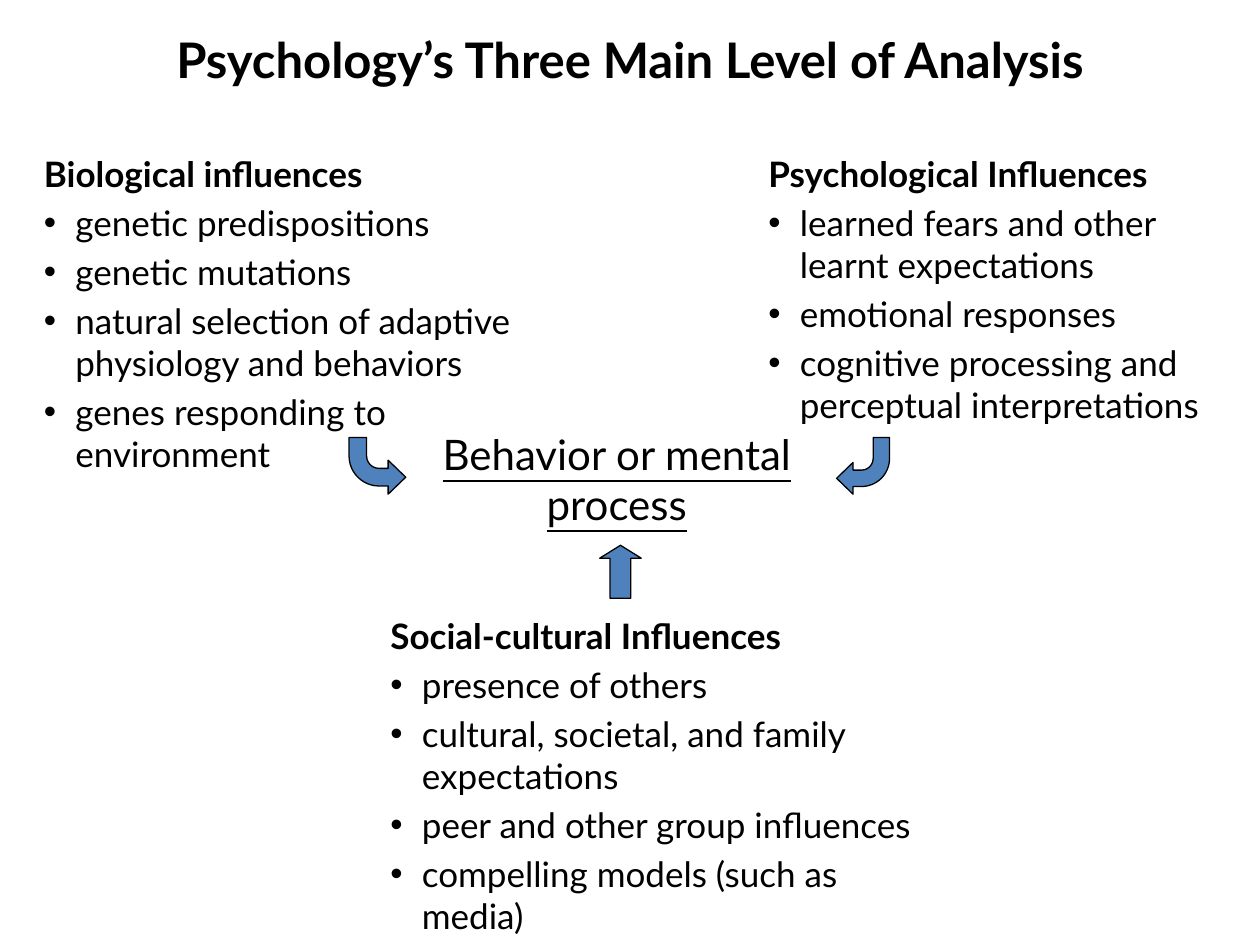
"""Build a slide on psychology's three main levels of analysis."""
from lxml import etree
from pptx import Presentation, util as u
from pptx.dml.color import RGBColor
from pptx.enum import shapes, text
from pptx.oxml import ns

THEME = {
    "font": "Lato", "ink": RGBColor.from_string("000000"),
    "arrow": RGBColor.from_string("4F81BD"), "outline": 0.75,
    "title": 28, "center": 24, "body": 20, "gap": 0.2, "indent": 0.25,
}
WIDTH, HEIGHT = 10, 7.5
TITLE = ("Psychology’s Three Main Level of Analysis", (0.05, 0.025, 0.9, 0.09))
CENTER = ("Behavior or mental process", (0.338, 0.473, 0.303, 0.067))
INFLUENCES = [
    ("Social-cultural Influences", (0.3, 0.644, 0.462, 0.336), [
        "presence of others",
        "cultural, societal, and family expectations",
        "peer and other group influences",
        "compelling models (such as media)",
    ]),
    ("Psychological Influences", (0.6, 0.155, 0.4, 0.227), [
        "learned fears and other learnt expectations",
        "emotional responses",
        "cognitive processing and perceptual interpretations",
    ]),
    ("Biological influences", (0.025, 0.155, 0.4, 0.227), [
        "genetic predispositions",
        "genetic mutations",
        "natural selection of adaptive physiology and behaviors",
        "genes responding to environment",
    ]),
]
BENT = ("BENT_ARROW", (0.31, 0.3, 0.31, 0.53))
ARROWS = [
    (*BENT, (0.664, 0.463, 0.042, 0.06), ("flipH", "flipV")),
    (*BENT, (0.277, 0.463, 0.045, 0.06), ("flipV",)),
    ("UP_ARROW", (0.5, 0.312), (0.476, 0.577, 0.033, 0.056), ()),
]


def place(shares):
    """Turn shares of the slide into lengths."""
    return [u.Inches(share * side) for share, side in zip(shares, (WIDTH, HEIGHT) * 2)]


def add_box(page, shares, anchor=text.MSO_ANCHOR.TOP):
    """Add a wrapping text box and return its frame."""
    frame = page.shapes.add_textbox(*place(shares)).text_frame
    frame.word_wrap = True
    frame.vertical_anchor = anchor
    return frame


def write(para, words, size, align=text.PP_ALIGN.LEFT, **formats):
    """Write one formatted span into a paragraph."""
    para.alignment = align
    para.space_before = u.Pt(size * THEME["gap"])
    span = para.add_run()
    span.text = words
    span.font.color.rgb = THEME["ink"]
    formats = {"name": THEME["font"], "size": u.Pt(size), **formats}
    for name, value in formats.items():
        setattr(span.font, name, value)


def add_bullet(para):
    """Give a paragraph a hanging bullet."""
    indent = u.Inches(THEME["indent"])
    properties = para._p.get_or_add_pPr()
    properties.set("marL", str(indent))
    properties.set("indent", str(-indent))
    etree.SubElement(properties, ns.qn("a:buFont")).set("typeface", "Arial")
    etree.SubElement(properties, ns.qn("a:buChar")).set("char", "•")


def add_influence(page, heading, shares, items):
    """Add a heading with its bulleted list."""
    frame = add_box(page, shares)
    write(frame.paragraphs[0], heading, THEME["body"], bold=True)
    for item in items:
        para = frame.add_paragraph()
        write(para, item, THEME["body"])
        add_bullet(para)


def add_arrow(page, kind, adjustments, shares, flips):
    """Add a block arrow, mirrored as asked."""
    arrow = page.shapes.add_shape(getattr(shapes.MSO_SHAPE, kind), *place(shares))
    for index, value in enumerate(adjustments):
        arrow.adjustments[index] = value
    for flip in flips:
        arrow._element.spPr.find(ns.qn("a:xfrm")).set(flip, "1")
    arrow.shadow.inherit = False
    arrow.fill.solid()
    arrow.fill.fore_color.rgb = THEME["arrow"]
    arrow.line.color.rgb = THEME["ink"]
    arrow.line.width = u.Pt(THEME["outline"])


def main():
    """Build and save the deck."""
    deck = Presentation()
    deck.slide_width, deck.slide_height = u.Inches(WIDTH), u.Inches(HEIGHT)
    page = deck.slides.add_slide(deck.slide_layouts[6])
    middle = text.PP_ALIGN.CENTER
    words, shares = TITLE
    write(add_box(page, shares).paragraphs[0], words, THEME["title"], middle, bold=True)
    for influence in INFLUENCES:
        add_influence(page, *influence)
    words, shares = CENTER
    frame = add_box(page, shares, text.MSO_ANCHOR.MIDDLE)
    write(frame.paragraphs[0], words, THEME["center"], middle, underline=True)
    for arrow in ARROWS:
        add_arrow(page, *arrow)
    deck.save("out.pptx")


if __name__ == "__main__":
    main()
